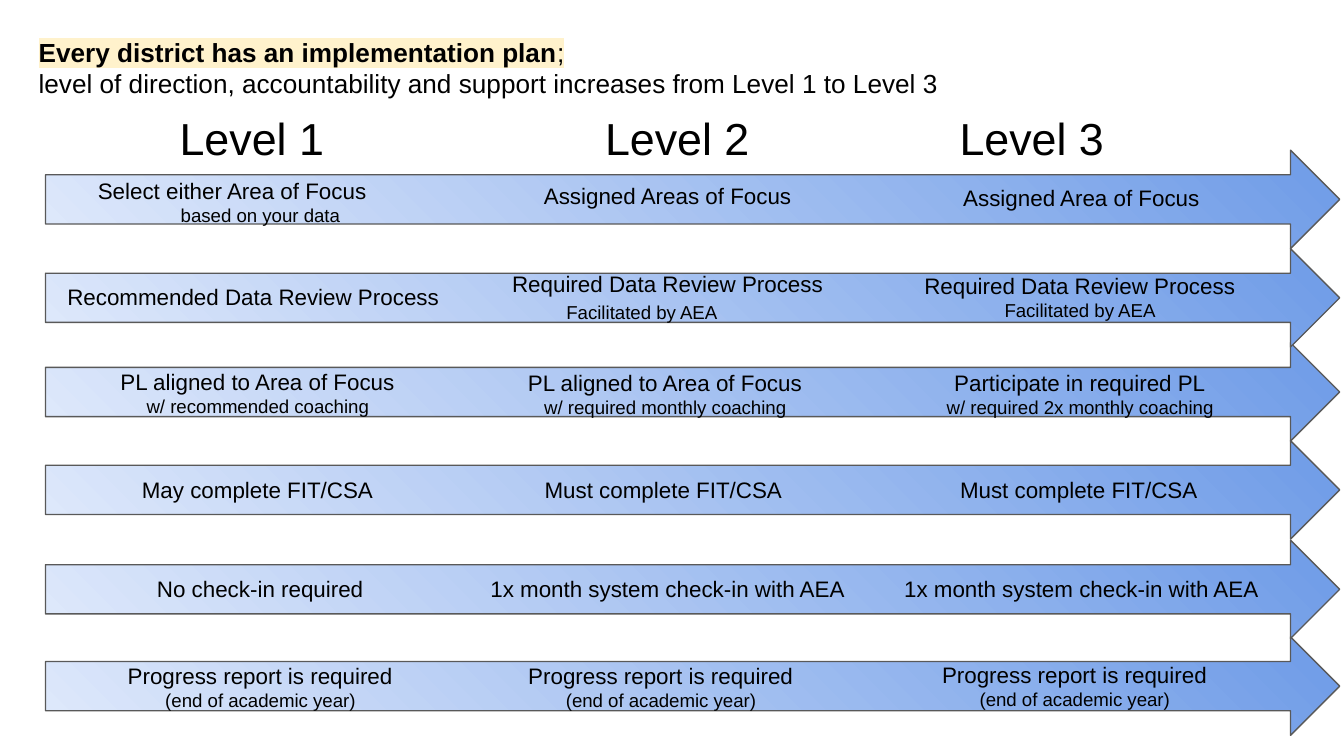
from lxml import etree
from pptx import Presentation
from pptx.dml.color import RGBColor
from pptx.enum.shapes import MSO_SHAPE
from pptx.enum.text import MSO_ANCHOR, MSO_AUTO_SIZE, PP_ALIGN
from pptx.oxml.ns import qn
from pptx.util import Cm, Pt

RIGHT_ARROW = MSO_SHAPE.RIGHT_ARROW
TOP, BOTTOM = MSO_ANCHOR.TOP, MSO_ANCHOR.BOTTOM
LEFT, CENTER = PP_ALIGN.LEFT, PP_ALIGN.CENTER
NO_AUTOFIT = MSO_AUTO_SIZE.NONE

COLORS = {
    "text": "000000",
    "highlight": "FFF2CC",
    "arrow_light": "DFE9FB",
    "arrow_dark": "6E9BE7",
    "outline": "595959",
}

# Level headings: text, left, width (cm)
HEADINGS = [("Level 1", 0.86, 7.8), ("Level 2", 8.33, 8.94), ("Level 3", 15.6, 7.8)]

# Text columns under the headings: left, width (cm)
COLUMNS = [(1.02, 7.8), (8.43, 8.38), (16.54, 7.8)]

REPORT = ["Progress report is required", "(end of academic year)"]

# Arrow top, then per level: shift from the column, text top (cm), lines
ROWS = [
    (2.84, [(-0.53, 3.1, ["Select either Area of Focus", "based on your data"]),
            (0, 3.2, ["Assigned Areas of Focus"]),
            (0, 3.23, ["Assigned Area of Focus"])]),
    (4.7, [(-0.13, 5.11, ["Recommended Data Review Process"]),
           (-0.49, 4.85, ["Required Data Review Process", "Facilitated by AEA"]),
           (-0.03, 4.9, ["Required Data Review Process", "Facilitated by AEA"])]),
    (6.48, [(-0.05, 6.71, ["PL aligned to Area of Focus", "w/ recommended coaching"]),
            (-0.05, 6.73, ["PL aligned to Area of Focus", "w/ required monthly coaching"]),
            (-0.03, 6.73, ["Participate in required PL", "w/ required 2x monthly coaching"])]),
    (8.33, [(-0.05, 8.76, ["May complete FIT/CSA"]),
            (-0.08, 8.76, ["Must complete FIT/CSA"]),
            (-0.05, 8.76, ["Must complete FIT/CSA"])]),
    (10.21, [(0, 10.62, ["No check-in required"]),
             (0, 10.62, ["1x month system check-in with AEA"]),
             (0, 10.62, ["1x month system check-in with AEA"])]),
    (12.04, [(0, 12.27, REPORT), (-0.13, 12.27, REPORT), (-0.13, 12.24, REPORT)]),
]

# Lines moved right within their box: (row, level) -> (line, indent in cm)
INDENTS = {(0, 0): (1, 1.06), (1, 1): (0, 0.98)}


class SlideBuilder:
    font = "Arial"
    inset = Cm(0.25)

    def __init__(self, slide):
        self.slide = slide

    def rgb(self, name):
        return RGBColor.from_string(COLORS[name])

    def frame(self, sp, anchor=TOP):
        tf = sp.text_frame
        tf.word_wrap = True
        tf.auto_size = NO_AUTOFIT
        tf.vertical_anchor = anchor
        tf.margin_left = tf.margin_right = self.inset
        tf.margin_top = tf.margin_bottom = self.inset
        return tf

    def style(self, p, size, align):
        p.alignment = align
        for r in p.runs:
            r.font.name = self.font
            r.font.size = Pt(size)
            r.font.bold = False
            r.font.color.rgb = self.rgb("text")

    def highlight(self, r):
        mark = etree.Element(qn("a:highlight"))
        etree.SubElement(mark, qn("a:srgbClr"), val=COLORS["highlight"])
        r.font._element.find(qn("a:solidFill")).addnext(mark)

    def title(self, lead, rest, second_line):
        sp = self.slide.shapes.title
        sp.left, sp.top, sp.width, sp.height = Cm(0.48), Cm(0.43), Cm(24.46), Cm(1.7)
        tf = self.frame(sp)
        tf.text = f"\n{second_line}"
        p = tf.paragraphs[0]
        for text in (lead, rest):
            p.add_run().text = text
        for line in tf.paragraphs:
            self.style(line, 14, LEFT)
        p.runs[0].font.bold = True
        for r in p.runs:
            self.highlight(r)

    def text(self, left, top, width, height, lines, sizes=(12, 10), anchor=TOP):
        sp = self.slide.shapes.add_textbox(Cm(left), Cm(top), Cm(width), Cm(height))
        tf = self.frame(sp, anchor)
        tf.text = "\n".join(lines)
        for p, size in zip(tf.paragraphs, sizes):
            self.style(p, size, CENTER)
        return tf

    def indent(self, p, length):
        pPr = p._p.get_or_add_pPr()
        pPr.set("marL", str(Cm(length)))
        pPr.set("indent", "0")

    def arrow(self, top):
        sp = self.slide.shapes.add_shape(
            RIGHT_ARROW, Cm(0.86), Cm(top), Cm(24.46), Cm(1.86))
        sp.shadow.inherit = False
        sp.line.color.rgb = self.rgb("outline")
        sp.line.width = Pt(0.75)
        sp.fill.gradient()
        for stop, name in zip(sp.fill.gradient_stops, ("arrow_light", "arrow_dark")):
            stop.color.rgb = self.rgb(name)
        # Radial gradient spreading from the bottom left corner
        lin = sp._element.spPr.find(f"{qn('a:gradFill')}/{qn('a:lin')}")
        radial = etree.Element(qn("a:path"), path="circle")
        etree.SubElement(radial, qn("a:fillToRect"), t="100000", r="100000")
        lin.getparent().replace(lin, radial)


def main():
    prs = Presentation()
    prs.slide_width, prs.slide_height = Cm(25.4), Cm(14.29)
    s = SlideBuilder(prs.slides.add_slide(prs.slide_layouts[5]))

    # Title and level headings
    s.title("Every district has an implementation plan", ";",
            "level of direction, accountability and support increases "
            "from Level 1 to Level 3")
    for name, left, width in HEADINGS:
        s.text(left, 1.24, width, 2.11, [name], sizes=(24,), anchor=BOTTOM)

    # Arrows, lowest first so that each upper one overlaps the next
    for top, _ in reversed(ROWS):
        s.arrow(top)

    # Text on the arrows
    for row, (_, cells) in enumerate(ROWS):
        for level, (shift, top, lines) in enumerate(cells):
            left, width = COLUMNS[level]
            height = 1.02 if len(lines) == 1 else 1.45
            tf = s.text(left + shift, top, width, height, lines)
            if (row, level) in INDENTS:
                line, length = INDENTS[row, level]
                s.indent(tf.paragraphs[line], length)
            if (row, level) == (1, 1):
                tf.paragraphs[1].space_before = Pt(2)

    prs.save("out.pptx")


if __name__ == "__main__":
    main()
